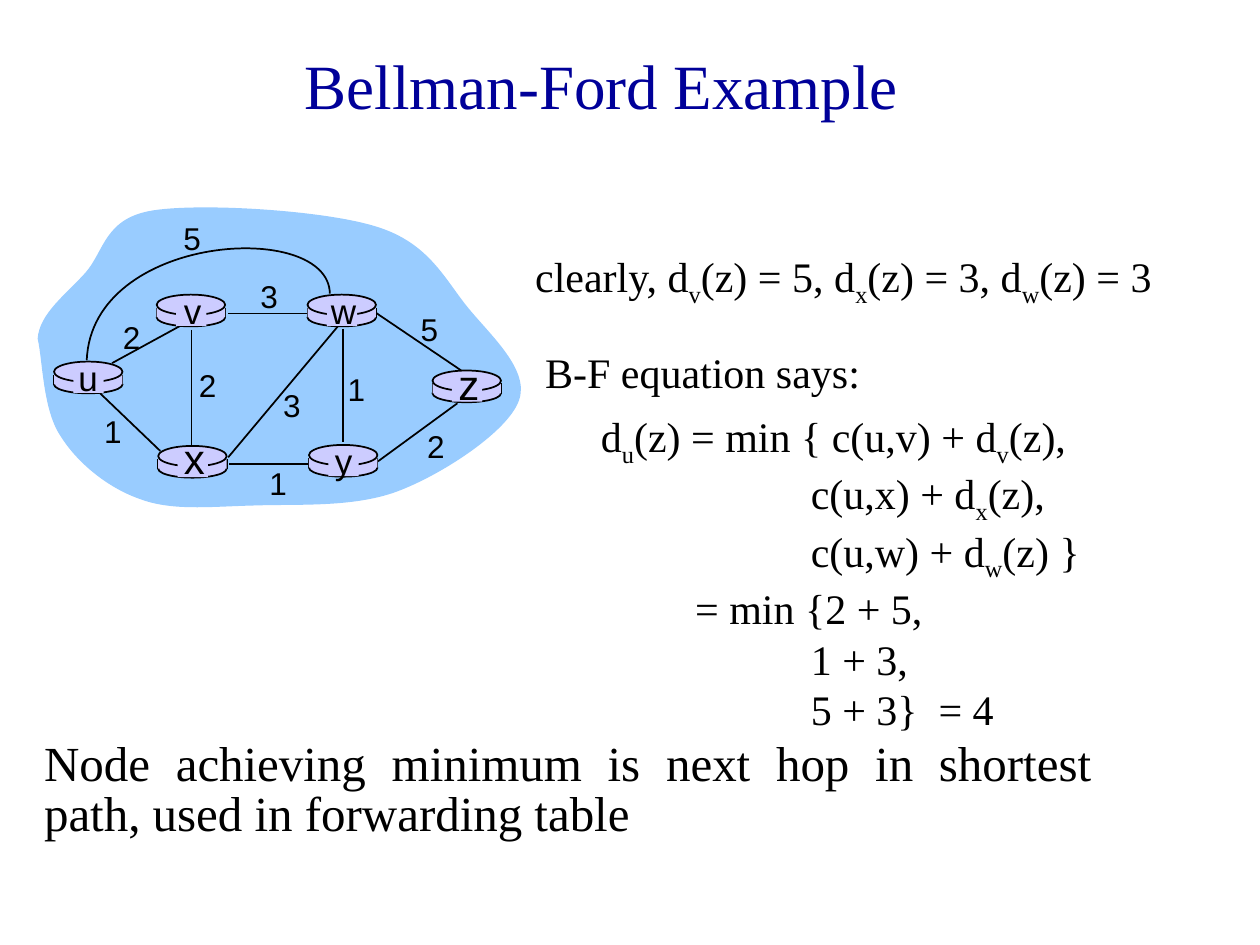
from itertools import chain

from lxml import etree
from pptx import Presentation
from pptx import util as u
from pptx.dml import color
from pptx.enum import shapes, text
from pptx.oxml import ns

SERIF, SANS = "Times New Roman", "Arial"
BLACK, NAVY, SKY, LILAC = "000000", "000099", "99CCFF", "CCCCFF"

CLOUD_START = (0.76, 6.83)
CLOUD_CURVES = [
    ((0.79, 6.32), (1.35, 5.92), (1.73, 5.49)),
    ((2.11, 5.05), (2.11, 4.39), (3.1, 4.24)),
    ((4.09, 4.09), (6.55, 4.24), (7.59, 4.57)),
    ((8.66, 4.9), (8.97, 5.64), (9.45, 6.22)),
    ((9.91, 6.78), (10.69, 7.47), (10.46, 8.08)),
    ((10.24, 8.69), (8.97, 9.53), (8.08, 9.88)),
    ((7.19, 10.24), (6.02, 10.16), (5.16, 10.19)),
    ((4.27, 10.21), (3.48, 10.31), (2.82, 10.06)),
    ((2.16, 9.83), (1.55, 9.32), (1.22, 8.79)),
    ((0.86, 8.26), (0.86, 7.24), CLOUD_START),
]
ARC_START = (6.65, 5.92)
ARC_CURVES = [((6.63, 4.42), (1.85, 4.7), (1.75, 7.26))]

ROUTERS = [
    ((1.09, 7.29), "u", (1.75, 7.62), 20),
    ((6.23, 8.97), "y", (6.92, 9.28), 20),
    ((3.19, 8.99), "x", (3.88, 9.26), 24),
    ((6.2, 5.94), "w", (6.84, 6.27), 20),
    ((3.16, 5.94), "v", (3.88, 6.27), 20),
    ((8.72, 7.47), "z", (9.41, 7.76), 24),
]
LINKS = [
    ((2.26, 7.32), (3.76, 6.5)),
    ((6.91, 6.63), (6.91, 8.92)),
    ((3.86, 6.65), (3.86, 9.02)),
    ((4.6, 9.22), (6.81, 6.58)),
    ((7.62, 9.3), (9.22, 8.13)),
    ((6.22, 9.36), (4.62, 9.36)),
    ((3.23, 9.09), (2.01, 7.92)),
    ((6.2, 6.32), (4.6, 6.32)),
    ((9.3, 7.47), (7.57, 6.3)),
]
COSTS = [
    ("2", (2.65, 6.78)), ("2", (4.18, 7.75)), ("1", (2.27, 8.68)),
    ("3", (5.88, 8.15)), ("1", (5.6, 9.72)), ("1", (7.18, 7.82)),
    ("2", (8.78, 8.98)), ("5", (8.65, 6.63)), ("3", (5.42, 5.96)),
    ("5", (3.87, 4.78)),
]
EQUATION = [
    ("d_u(z) = min { c(u,v) + d_v(z),", 0),
    ("c(u,x) + d_x(z),", 4.23),
    ("c(u,w) + d_w(z) }", 4.23),
    ("= min {2 + 5,", 1.9),
    ("1 + 3,", 4.23),
    ("5 + 3}  = 4", 4.23),
]


def rgb(value):
    return color.RGBColor.from_string(value)


def place(item, left, top, width, height):
    item.left, item.top = u.Cm(left), u.Cm(top)
    item.width, item.height = u.Cm(width), u.Cm(height)


def paint(item, fill=None, line=None):
    item.shadow.inherit = False
    if fill:
        item.fill.solid()
        item.fill.fore_color.rgb = rgb(fill)
    else:
        item.fill.background()
    if line:
        item.line.color.rgb = rgb(line)
        item.line.width = u.Pt(1)
    else:
        item.line.fill.background()


def write(paragraph, content, size, font=SERIF, ink=BLACK, align=text.PP_ALIGN.LEFT):
    paragraph.alignment = align
    paragraph.font.name = font
    paragraph.font.size = u.Pt(size)
    paragraph.font.color.rgb = rgb(ink)
    first, *rest = content.split("_")
    paragraph.add_run().text = first
    for piece in rest:
        subscript = paragraph.add_run()
        subscript.text = piece[0]
        subscript.font._element.set("baseline", "-25000")
        paragraph.add_run().text = piece[1:]


def add_text(slide, content, box, size, wrap=False, **style):
    frame = slide.shapes.add_textbox(*map(u.Cm, box)).text_frame
    frame.word_wrap = wrap
    write(frame.paragraphs[0], content, size, **style)
    return frame.paragraphs[0]


def add_label(slide, content, center, size):
    x, y = center
    width, height = 0.84, size * 0.055
    box = (x - width / 2, y - height / 2, width, height)
    add_text(slide, content, box, size, font=SANS, align=text.PP_ALIGN.CENTER)


def add_curve(slide, start, curves, closed=False, **look):
    points = [tuple(map(u.Cm, point)) for point in chain(*curves)]
    builder = slide.shapes.build_freeform(*map(u.Cm, start))
    builder.add_line_segments(points, close=closed)
    curve = builder.convert_to_shape()
    segments = list(curve._element.iter(ns.qn("a:lnTo")))
    for index in range(0, len(segments), 3):
        bezier = etree.Element(ns.qn("a:cubicBezTo"))
        segments[index].addprevious(bezier)
        for segment in segments[index:index + 3]:
            bezier.append(segment[0])
            segment.getparent().remove(segment)
    paint(curve, **look)


def add_line(slide, start, end):
    line = slide.shapes.add_connector(
        shapes.MSO_CONNECTOR.STRAIGHT, *map(u.Cm, start + end))
    line.line.color.rgb = rgb(BLACK)
    line.line.width = u.Pt(1)
    etree.SubElement(line._element.spPr, ns.qn("a:effectLst"))


def add_part(slide, kind, box, line=None):
    paint(slide.shapes.add_shape(kind, *map(u.Cm, box)), LILAC, line)


def add_router(slide, corner, name, center, size):
    oval, block = shapes.MSO_SHAPE.OVAL, shapes.MSO_SHAPE.RECTANGLE
    x, y = corner
    width = 1.38
    add_part(slide, oval, (x, y + 0.28, width, 0.36), BLACK)
    for side in (x, x + width):
        add_line(slide, (side, y + 0.26), (side, y + 0.47))
    add_part(slide, block, (x, y + 0.26, width, 0.2))
    add_part(slide, oval, (x, y, width, 0.41), BLACK)
    add_part(slide, block, (x + 0.39, y + 0.05, 0.61, 0.58))
    add_label(slide, name, center, size)


def add_network(slide):
    add_curve(slide, CLOUD_START, CLOUD_CURVES, closed=True, fill=SKY)
    for start, end in LINKS:
        add_line(slide, start, end)
    add_curve(slide, ARC_START, ARC_CURVES, line=BLACK)
    for router in ROUTERS:
        add_router(slide, *router)
    for cost, center in COSTS:
        add_label(slide, cost, center, 18)


def fill_equation(body):
    place(body, 11.86, 8.15, 10.31, 6.43)
    frame = body.text_frame
    frame.word_wrap = True
    frame.auto_size = text.MSO_AUTO_SIZE.NONE
    for index, (content, indent) in enumerate(EQUATION):
        line = frame.add_paragraph() if index else frame.paragraphs[0]
        line.space_before = u.Pt(0)
        properties = line._p.get_or_add_pPr()
        properties.set("marL", str(u.Cm(indent)))
        properties.set("indent", "0")
        etree.SubElement(properties, ns.qn("a:buNone"))
        write(line, content, 24)


def main():
    deck = Presentation()
    deck.slide_width, deck.slide_height = u.Cm(25.4), u.Cm(19.05)
    slide = deck.slides.add_slide(deck.slide_layouts[1])
    title, body = slide.placeholders
    place(title, 1.33, 0.48, 21.59, 2.44)
    write(title.text_frame.paragraphs[0], "Bellman-Ford Example", 36,
          ink=NAVY, align=text.PP_ALIGN.CENTER)
    add_network(slide)
    add_text(slide, "clearly, d_v(z) = 5, d_x(z) = 3, d_w(z) = 3",
             (10.54, 4.93, 13.16, 1.3), 24)
    fill_equation(body)
    note = add_text(
        slide,
        "Node achieving minimum is next hop in shortest path, used in forwarding table",
        (0.64, 14.83, 21.62, 2.29), 28, wrap=True, align=text.PP_ALIGN.JUSTIFY)
    note.line_spacing = 0.85
    add_text(slide, "B-F equation says:", (10.74, 6.86, 6.91, 1.3), 24)
    deck.save("out.pptx")


if __name__ == "__main__":
    main()
